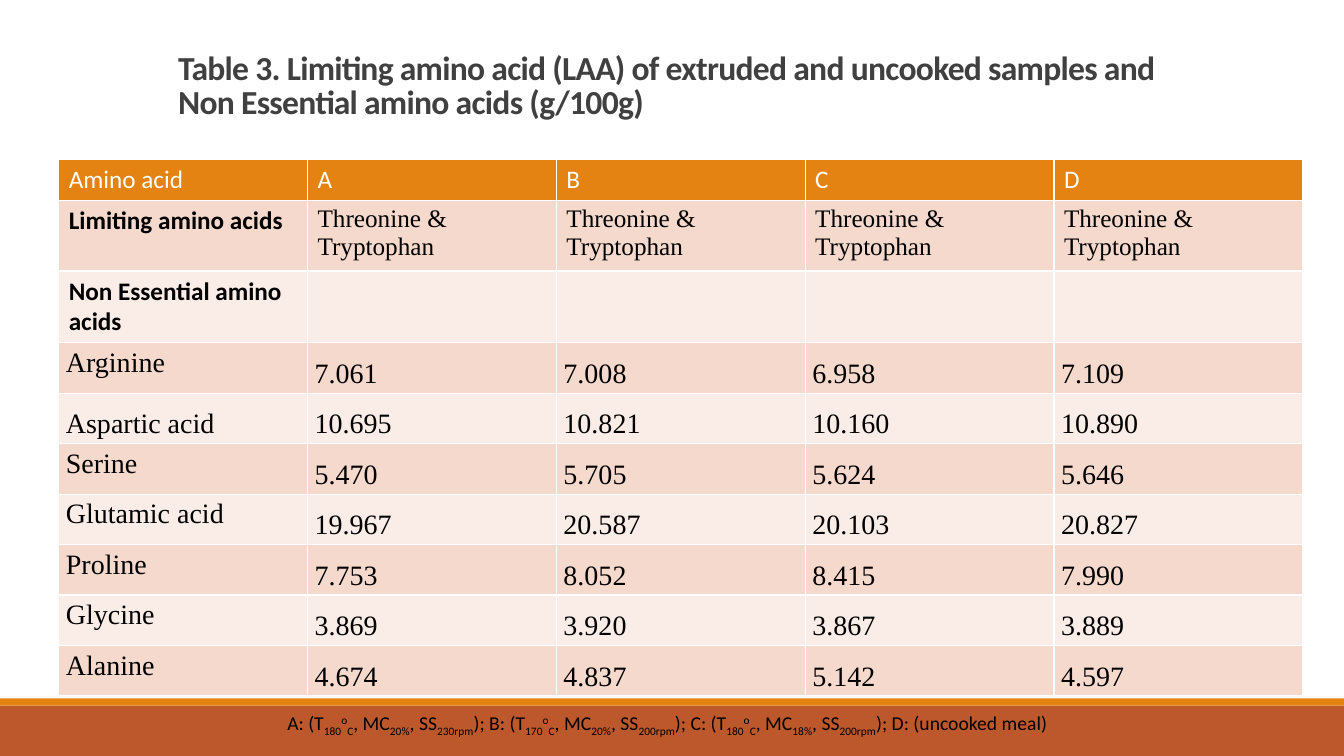
from lxml import etree
from pptx import Presentation
from pptx.dml.color import RGBColor
from pptx.enum.shapes import MSO_SHAPE
from pptx.enum.text import MSO_ANCHOR
from pptx.oxml.ns import qn
from pptx.util import Cm, Pt

RECTANGLE = MSO_SHAPE.RECTANGLE
TOP, BOTTOM = MSO_ANCHOR.TOP, MSO_ANCHOR.BOTTOM
SANS, SERIF = "Calibri", "Times New Roman"
SUBSCRIPT, SUPERSCRIPT = -25, 30
COLORS = {
    "orange": "E48312", "rust": "BD582C", "band_dark": "F5D9CC",
    "band_light": "FAEDE7", "white": "FFFFFF", "black": "000000", "title": "404040",
}

TITLE = ("Table 3. Limiting amino acid (LAA) of extruded and uncooked samples "
         "and Non Essential amino acids (g/100g)")
HEADER = ["Amino acid", "A", "B", "C", "D"]
SECTIONS = [
    ["Limiting amino acids"] + ["Threonine & Tryptophan"] * 4,
    ["Non Essential amino acids", "", "", "", ""],
]
VALUES = [
    ["Arginine", "7.061", "7.008", "6.958", "7.109"],
    ["Aspartic acid", "10.695", "10.821", "10.160", "10.890"],
    ["Serine", "5.470", "5.705", "5.624", "5.646"],
    ["Glutamic acid", "19.967", "20.587", "20.103", "20.827"],
    ["Proline", "7.753", "8.052", "8.415", "7.990"],
    ["Glycine", "3.869", "3.920", "3.867", "3.889"],
    ["Alanine", "4.674", "4.837", "5.142", "4.597"],
]
# Sample, temperature, moisture content, screw speed
CONDITIONS = [
    ("A", "180", "20%", "230rpm"),
    ("B", "170", "20%", "200rpm"),
    ("C", "180", "18%", "200rpm"),
]
UNCOOKED = "D: (uncooked meal)"
ROW_HEIGHTS = [1.03, 1.66, 1.81] + [1.18] * len(VALUES)
COLUMN_WIDTH = 6.27


def color(name):
    return RGBColor.from_string(COLORS[name])


def add_run(paragraph, text, size, font=SANS, fill="black", bold=False, baseline=0):
    run = paragraph.add_run()
    run.text = text
    run.font.name = font
    run.font.size = Pt(size)
    run.font.bold = bold
    run.font.color.rgb = color(fill)
    if baseline:
        run.font._element.set("baseline", str(baseline * 1000))
    return run


def add_bar(slide, top, height, fill):
    bar = slide.shapes.add_shape(RECTANGLE, 0, Cm(top), Cm(33.87), Cm(height))
    bar.shadow.inherit = False
    bar.fill.solid()
    bar.fill.fore_color.rgb = color(fill)
    bar.line.fill.background()


def add_text_box(slide, left, top, width, height, anchor):
    """Add a wrapping text box and return its first paragraph."""
    frame = slide.shapes.add_textbox(Cm(left), Cm(top), Cm(width), Cm(height)).text_frame
    frame.word_wrap = True
    frame.vertical_anchor = anchor
    return frame.paragraphs[0]


def style_cell(cell, fill):
    """Give the cell thin white borders and a solid fill."""
    properties = cell._tc.get_or_add_tcPr()
    for side in ("a:lnL", "a:lnR", "a:lnT", "a:lnB"):
        line = etree.SubElement(properties, qn(side), w=str(Pt(1)))
        solid = etree.SubElement(line, qn("a:solidFill"))
        etree.SubElement(solid, qn("a:srgbClr"), val=COLORS["white"])
    cell.fill.solid()
    cell.fill.fore_color.rgb = color(fill)


def fill_cell(cell, text, row, column):
    first_column = column == 0
    paragraph = cell.text_frame.paragraphs[0]
    if row == 0:
        add_run(paragraph, text, 18, fill="white")
    elif row <= len(SECTIONS):
        if text:
            add_run(paragraph, text, 18, SANS if first_column else SERIF, bold=first_column)
    else:
        cell.margin_left = cell.margin_right = Cm(0.18)
        cell.margin_top = cell.margin_bottom = 0
        tight = first_column and text != "Aspartic acid"
        paragraph.line_spacing = 1.15 if tight else 1.5
        add_run(paragraph, text, 20, SERIF)


def add_amino_acid_table(slide):
    rows = [HEADER] + SECTIONS + VALUES
    table = slide.shapes.add_table(
        len(rows), len(HEADER), Cm(1.48), Cm(4.02),
        Cm(COLUMN_WIDTH * len(HEADER)), Cm(sum(ROW_HEIGHTS))).table
    for table_column in table.columns:
        table_column.width = Cm(COLUMN_WIDTH)
    for row, texts in enumerate(rows):
        table.rows[row].height = Cm(ROW_HEIGHTS[row])
        band = "orange" if row == 0 else "band_dark" if row % 2 else "band_light"
        for column, text in enumerate(texts):
            cell = table.cell(row, column)
            style_cell(cell, band)
            fill_cell(cell, text, row, column)


def add_conditions(slide):
    paragraph = add_text_box(slide, 6.99, 17.78, 21.59, 1.27, TOP)
    lead = ""
    for sample, temperature, moisture, speed in CONDITIONS:
        for text, baseline in (
            (f"{lead}{sample}: (T", 0), (temperature, SUBSCRIPT),
            ("o", SUPERSCRIPT), ("C", SUBSCRIPT),
            (", MC", 0), (moisture, SUBSCRIPT),
            (", SS", 0), (speed, SUBSCRIPT),
        ):
            add_run(paragraph, text, 14, baseline=baseline)
        lead = "); "
    add_run(paragraph, lead + UNCOOKED, 14)


def main():
    presentation = Presentation()
    presentation.slide_width, presentation.slide_height = Cm(33.87), Cm(19.05)
    slide = presentation.slides.add_slide(presentation.slide_layouts[6])
    add_bar(slide, 17.78, 1.27, "rust")
    add_bar(slide, 17.6, 0.18, "orange")
    title = add_text_box(slide, 4.24, 0, 25.4, 3.18, BOTTOM)
    title.line_spacing = 0.85
    title_run = add_run(title, TITLE, 24, fill="title", bold=True)
    title_run.font._element.set("spc", "-50")
    add_amino_acid_table(slide)
    add_conditions(slide)
    presentation.save("out.pptx")


if __name__ == "__main__":
    main()
